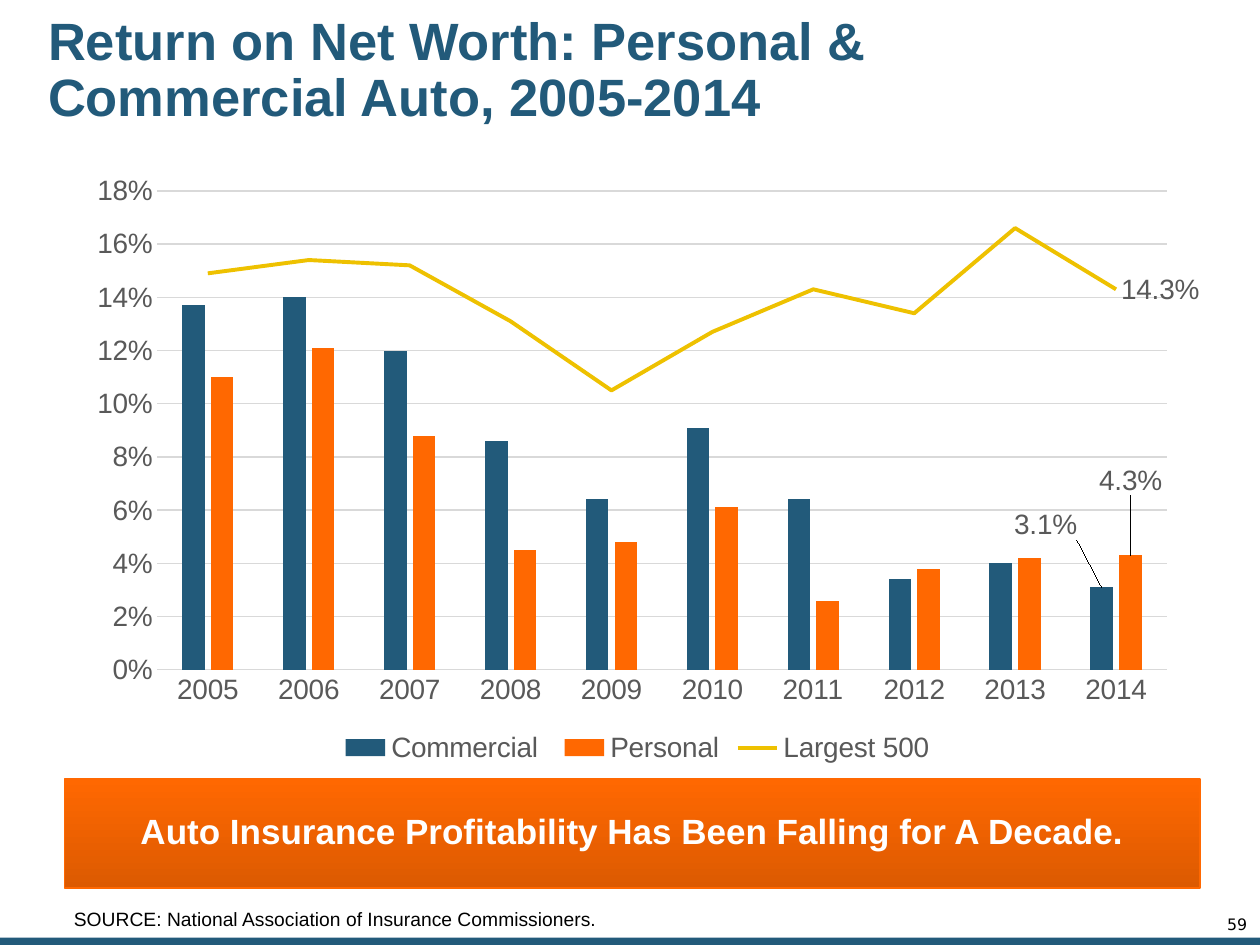
import pptx
import pptx.util
import pptx.oxml
import pptx.oxml.ns
import pptx.dml.color
import pptx.chart.data
import pptx.enum.chart
import pptx.enum.shapes
import pptx.enum.text

Cm, Pt = pptx.util.Cm, pptx.util.Pt
Align = pptx.enum.text.PP_ALIGN
Anchor = pptx.enum.text.MSO_ANCHOR
Place = pptx.enum.chart.XL_LABEL_POSITION
Tick = pptx.enum.chart.XL_TICK_MARK

# Content
HUES = {"blue": "225A7A", "orange": "FF6801", "rust": "DC5A01",
        "gold": "EEC100", "grey": "595959", "grid": "D9D9D9",
        "white": "FFFFFF", "black": "000000"}
YEARS = [str(y) for y in range(2005, 2015)]
# name, hue, percentages, label place, label shift (share of chart size)
SERIES = [
    ("Commercial ", "blue",
     [13.7, 14, 12, 8.6, 6.4, 9.1, 6.4, 3.4, 4, 3.1],
     Place.OUTSIDE_END, (-0.05, -0.07)),
    ("Personal", "orange",
     [11, 12.1, 8.8, 4.5, 4.8, 6.1, 2.6, 3.8, 4.2, 4.3],
     Place.OUTSIDE_END, (0, -0.09)),
    ("Largest 500", "gold",
     [14.9, 15.4, 15.2, 13.1, 10.5, 12.7, 14.3, 13.4, 16.6, 14.3],
     Place.RIGHT, None),
]
# text, box in cm, insets in cm, frame values, paragraph values, font values, hue
TEXTS = {
    "title": ("Return on Net Worth: Personal & Commercial Auto, 2005-2014",
              (0.84, 0.25, 20.55, 2.39), (0.13, 0.13, 0.13, 0.13),
              {"vertical_anchor": Anchor.MIDDLE}, {"line_spacing": 0.9},
              {"name": "Arial", "size": Pt(30), "bold": True}, "blue"),
    "page": ("59", (23.9, 18.49, 1.24, 0.33), (0, 0, 0, 0),
             {}, {"alignment": Align.RIGHT, "line_spacing": 0.85},
             {"name": "DejaVu Sans", "size": Pt(9)}, "black"),
    "banner": ("Auto Insurance Profitability Has Been Falling for A Decade.",
               (1.3, 15.7, 22.89, 2.21), (0.25, 0.13, 0.25, 0.18),
               {"vertical_anchor": Anchor.MIDDLE},
               {"alignment": Align.CENTER, "line_spacing": 0.95},
               {"name": "Arial", "size": Pt(20), "bold": True}, "white"),
    "source": ("SOURCE: National Association of Insurance Commissioners.",
               (1.24, 18.16, 13.16, 0.74), (0.25, 0.13, 0.25, 0.13),
               {}, {}, {"name": "Arial", "size": Pt(11)}, "black"),
}
CHART = (1.52, 3.3, 22.66, 12.19)
PLOT = {"x": 0.073, "y": 0.045, "w": 0.898, "h": 0.792}
STRIP = (0, 18.9, 25.4, 0.15)
C15 = "http://schemas.microsoft.com/office/drawing/2012/chart"


def hue(name):
    return pptx.dml.color.RGBColor.from_string(HUES[name])


def apply(obj, values):
    for key, val in values.items():
        setattr(obj, key, val)


def xml(text):
    start, rest = text.split(">", 1)
    space = pptx.oxml.ns.nsdecls("c")
    return pptx.oxml.parse_xml(f"{start} {space}>{rest}")


def layout(values, inner=False):
    parts = '<c:layoutTarget val="inner"/>' if inner else ""
    if inner:
        parts += '<c:xMode val="edge"/><c:yMode val="edge"/>'
    parts += "".join(f'<c:{k} val="{v}"/>' for k, v in values.items())
    return xml(f"<c:layout><c:manualLayout>{parts}</c:manualLayout></c:layout>")


def style(font, color="grey"):
    apply(font, {"name": "Arial", "size": Pt(16), "bold": False})
    font.color.rgb = hue(color)


def rect(slide, box):
    shape = slide.shapes.add_shape(
        pptx.enum.shapes.MSO_SHAPE.RECTANGLE, *map(Cm, box))
    shape.shadow.inherit = False
    return shape


def write(shape, text, inset, frame, para, font, color):
    body = shape.text_frame
    sides = ("margin_left", "margin_top", "margin_right", "margin_bottom")
    apply(body, dict(zip(sides, map(Cm, inset)), word_wrap=True, **frame))
    first = body.paragraphs[0]
    apply(first, para)
    run = first.add_run()
    run.text = text
    apply(run.font, font)
    run.font.color.rgb = hue(color)


def label(series, place, shift):
    series.data_labels.show_value = False
    tag = series.points[len(YEARS) - 1].data_label
    style(tag.font)
    tag.position = place
    if not shift:
        return
    dlbls = series.data_labels._element
    item = dlbls.find(pptx.oxml.ns.qn("c:dLbl"))
    for old in item.findall(pptx.oxml.ns.qn("c:layout")):
        item.remove(old)
    item[0].addnext(layout(dict(zip("xy", shift))))
    # Leader lines from the moved labels to the bars
    dlbls.append(xml(
        '<c:extLst><c:ext uri="{CE6537A1-D6FC-4f65-9D91-7224C49458BB}" '
        f'xmlns:c15="{C15}"><c15:showLeaderLines val="1"/></c:ext></c:extLst>'))


def split(chart):
    """Move the last column series to a line plot on the same axes."""
    qn = pptx.oxml.ns.qn
    bar = chart.plots[0]._element
    line = xml('<c:lineChart><c:grouping val="standard"/>'
               '<c:varyColors val="0"/></c:lineChart>')
    ser = bar.findall(qn("c:ser"))[-1]
    for flag in ser.findall(qn("c:invertIfNegative")):
        ser.remove(flag)
    line.append(ser)
    line.append(xml('<c:marker val="1"></c:marker>'))
    for axis in bar.findall(qn("c:axId")):
        line.append(xml(f'<c:axId val="{axis.get("val")}"></c:axId>'))
    bar.addnext(line)


def draw(slide):
    data = pptx.chart.data.CategoryChartData(number_format="0.0%")
    data.categories = YEARS
    for name, _, vals, _, _ in SERIES:
        data.add_series(name, [round(v / 100, 3) for v in vals])
    kind = pptx.enum.chart.XL_CHART_TYPE.COLUMN_CLUSTERED
    chart = slide.shapes.add_chart(kind, *map(Cm, CHART), data).chart
    style(chart.font)
    apply(chart, {"has_title": False, "has_legend": True})
    apply(chart.legend, {"include_in_layout": False,
                         "position": pptx.enum.chart.XL_LEGEND_POSITION.BOTTOM})
    style(chart.legend.font)
    apply(chart.plots[0], {"gap_width": 219, "overlap": -27,
                           "vary_by_categories": False})

    # Axes
    cat, val = chart.category_axis, chart.value_axis
    for axis in (cat, val):
        apply(axis, {"major_tick_mark": Tick.NONE, "minor_tick_mark": Tick.NONE})
        style(axis.tick_labels.font)
    apply(val, {"minimum_scale": 0, "maximum_scale": 0.18, "major_unit": 0.02,
                "has_major_gridlines": True})
    apply(val.tick_labels, {"number_format": "0%",
                            "number_format_is_linked": False})
    val.format.line.fill.background()
    for rule in (cat.format.line, val.major_gridlines.format.line):
        rule.color.rgb = hue("grid")
        rule.width = Pt(0.75)

    # Series
    split(chart)
    bars, lines = chart.plots
    for item, (_, color, _, place, shift) in zip(
            [*bars.series, *lines.series], SERIES):
        if place == Place.RIGHT:
            item.smooth = False
            item.marker.style = pptx.enum.chart.XL_MARKER_STYLE.NONE
            item.format.line.color.rgb = hue(color)
            item.format.line.width = Pt(2.25)
        else:
            item.invert_if_negative = False
            item.format.fill.solid()
            item.format.fill.fore_color.rgb = hue(color)
        label(item, place, shift)

    # Plot area
    area = bars._element.getparent()
    for old in area.findall(pptx.oxml.ns.qn("c:layout")):
        area.remove(old)
    area.insert(0, layout(PLOT, inner=True))


def main():
    deck = pptx.Presentation()
    apply(deck, {"slide_width": Cm(25.4), "slide_height": Cm(19.05)})
    slide = deck.slides.add_slide(deck.slide_layouts[6])

    # Bottom strip
    strip = rect(slide, STRIP)
    strip.fill.solid()
    strip.fill.fore_color.rgb = hue("blue")
    strip.line.fill.background()

    draw(slide)

    # Texts and banner
    for name, (text, box, *rest) in TEXTS.items():
        if name == "banner":
            shape = rect(slide, box)
            shape.fill.gradient()
            shape.fill.gradient_angle = 270
            for stop, color in zip(shape.fill.gradient_stops, ("orange", "rust")):
                stop.color.rgb = hue(color)
            shape.line.color.rgb = hue("orange")
            shape.line.width = Pt(1)
        else:
            shape = slide.shapes.add_textbox(*map(Cm, box))
        write(shape, text, *rest)

    deck.save("out.pptx")


if __name__ == "__main__":
    main()
